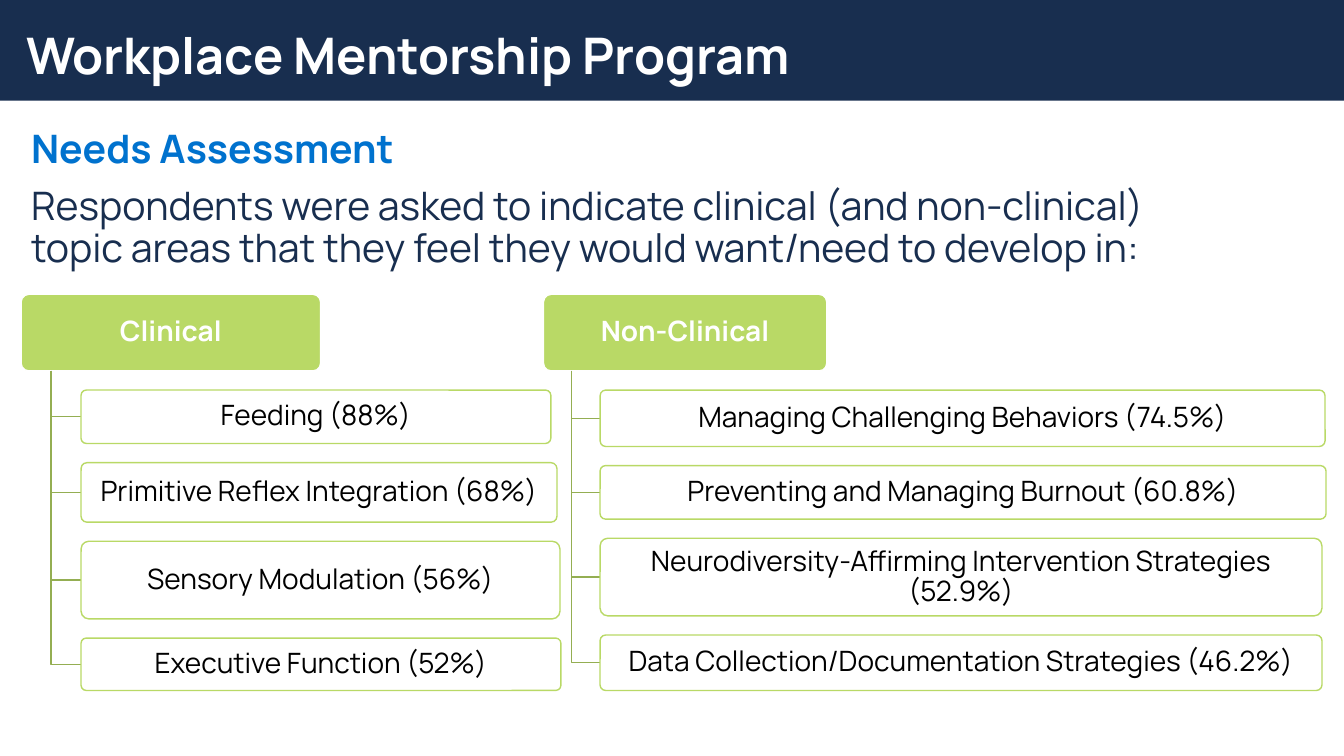
from lxml.etree import SubElement
from pptx import Presentation
from pptx.dml.color import RGBColor
from pptx.enum.shapes import MSO_SHAPE
from pptx.enum.text import MSO_ANCHOR, PP_ALIGN
from pptx.oxml.ns import qn
from pptx.util import Inches, Pt

NAVY = RGBColor(0x18, 0x2E, 0x4F)
BLUE = RGBColor(0x00, 0x72, 0xCE)
LIME = RGBColor(0xB9, 0xD9, 0x66)
OLIVE = RGBColor(0x94, 0xAE, 0x52)
WHITE = RGBColor(0xFF, 0xFF, 0xFF)
BLACK = RGBColor(0x00, 0x00, 0x00)

# Content: each topic is (text, box width, box height)
TITLE = "Workplace Mentorship Program"
SUBTITLE = "Needs Assessment"
INTRO = ("Respondents were asked to indicate clinical (and non-clinical) "
         "topic areas that they feel they would want/need to develop in:")
BRANCHES = [
    {"name": "Clinical", "left": 0.21, "width": 2.97, "topics": [
        ("Feeding (88%)", 4.66, 0.53),
        ("Primitive Reflex Integration (68%)", 4.72, 0.59),
        ("Sensory Modulation (56%)", 4.75, 0.77),
        ("Executive Function (52%)", 4.76, 0.52)]},
    {"name": "Non-Clinical", "left": 5.39, "width": 2.81, "topics": [
        ("Managing Challenging Behaviors (74.5%)", 7.19, 0.56),
        ("Preventing and Managing Burnout (60.8%)", 7.2, 0.53),
        ("Neurodiversity-Affirming Intervention Strategies (52.9%)", 7.16, 0.77),
        ("Data Collection/Documentation Strategies (46.2%)", 7.16, 0.55)]},
]
HEAD_TOP, HEAD_HEIGHT, GAP = 2.92, 0.76, 0.19

TITLE_FONT = {"size": Pt(36), "bold": True, "color": WHITE}
SUBTITLE_FONT = {"size": Pt(28), "bold": True, "color": BLUE}
INTRO_FONT = {"size": Pt(28), "bold": False, "color": NAVY}
HEAD_FONT = {"size": Pt(20), "bold": True, "color": WHITE}
TOPIC_FONT = {"size": Pt(20), "bold": False, "color": BLACK}

prs = Presentation()
prs.slide_width, prs.slide_height = Inches(13.33), Inches(7.5)
s = prs.slides.add_slide(prs.slide_layouts[6])


def write(p, text, font):
    p.line_spacing = 0.9
    r = p.add_run()
    r.text = text
    r.font.name = "Manrope"
    for key, value in font.items():
        if key == "color":
            r.font.color.rgb = value
        else:
            setattr(r.font, key, value)


def add_text(left, top, width, height, lines, anchor):
    tf = s.shapes.add_textbox(*map(Inches, (left, top, width, height))).text_frame
    tf.word_wrap = True
    tf.vertical_anchor = anchor
    for i, (text, font) in enumerate(lines):
        p = tf.add_paragraph() if i else tf.paragraphs[0]
        if i:
            p.space_before = Pt(10)
        write(p, text, font)


def add_box(left, top, width, height, text, font, fill, line):
    sp = s.shapes.add_shape(MSO_SHAPE.ROUNDED_RECTANGLE,
                            *map(Inches, (left, top, width, height)))
    sp.adjustments[0] = 0.1
    sp.shadow.inherit = False
    sp.fill.solid()
    sp.fill.fore_color.rgb = fill
    sp.line.color.rgb = line
    sp.line.width = Pt(1)
    tf = sp.text_frame
    tf.word_wrap = True
    tf.vertical_anchor = MSO_ANCHOR.MIDDLE
    margins = {"margin_left": 0.06, "margin_right": 0.06,
               "margin_top": 0.05, "margin_bottom": 0.05}
    for side, size in margins.items():
        setattr(tf, side, Inches(size))
    tf.paragraphs[0].alignment = PP_ALIGN.CENTER
    write(tf.paragraphs[0], text, font)
    return sp


def add_elbow(x, top, right, bottom):
    x, top, right, bottom = map(Inches, (x, top, right, bottom))
    path = s.shapes.build_freeform(x, top)
    path.add_line_segments([(x, bottom), (right, bottom)], close=False)
    sp = path.convert_to_shape()
    sp.shadow.inherit = False
    sp.fill.background()
    sp.line.color.rgb = OLIVE
    sp.line.width = Pt(1)


# Title band and introduction
band = s.shapes.add_shape(MSO_SHAPE.RECTANGLE, 0, 0, prs.slide_width, Inches(1))
band.shadow.inherit = False
band.fill.solid()
band.fill.fore_color.rgb = NAVY
band.line.fill.background()
add_text(0.21, 1.24, 12.03, 1.6,
         [(SUBTITLE, SUBTITLE_FONT), (INTRO, INTRO_FONT)], MSO_ANCHOR.TOP)
add_text(0.16, 0.15, 11.5, 0.85, [(TITLE, TITLE_FONT)], MSO_ANCHOR.MIDDLE)

# Topic trees: the stem sits at 10% of the header width, the boxes at 20%
for branch in BRANCHES:
    left, width = branch["left"], branch["width"]
    stem, box_left = left + width * 0.1, left + width * 0.2
    head_bottom = HEAD_TOP + HEAD_HEIGHT
    add_box(left, HEAD_TOP, width, HEAD_HEIGHT, branch["name"],
            HEAD_FONT, LIME, WHITE)
    top = head_bottom + GAP
    for text, box_width, height in branch["topics"]:
        add_elbow(stem, head_bottom, box_left, top + height / 2)
        sp = add_box(box_left, top, box_width, height, text,
                     TOPIC_FONT, WHITE, LIME)
        # 90% opaque fill
        color = sp.fill._xPr.find(qn("a:solidFill"))[0]
        SubElement(color, qn("a:alpha"), val="90000")
        top += height + GAP

prs.save("out.pptx")
